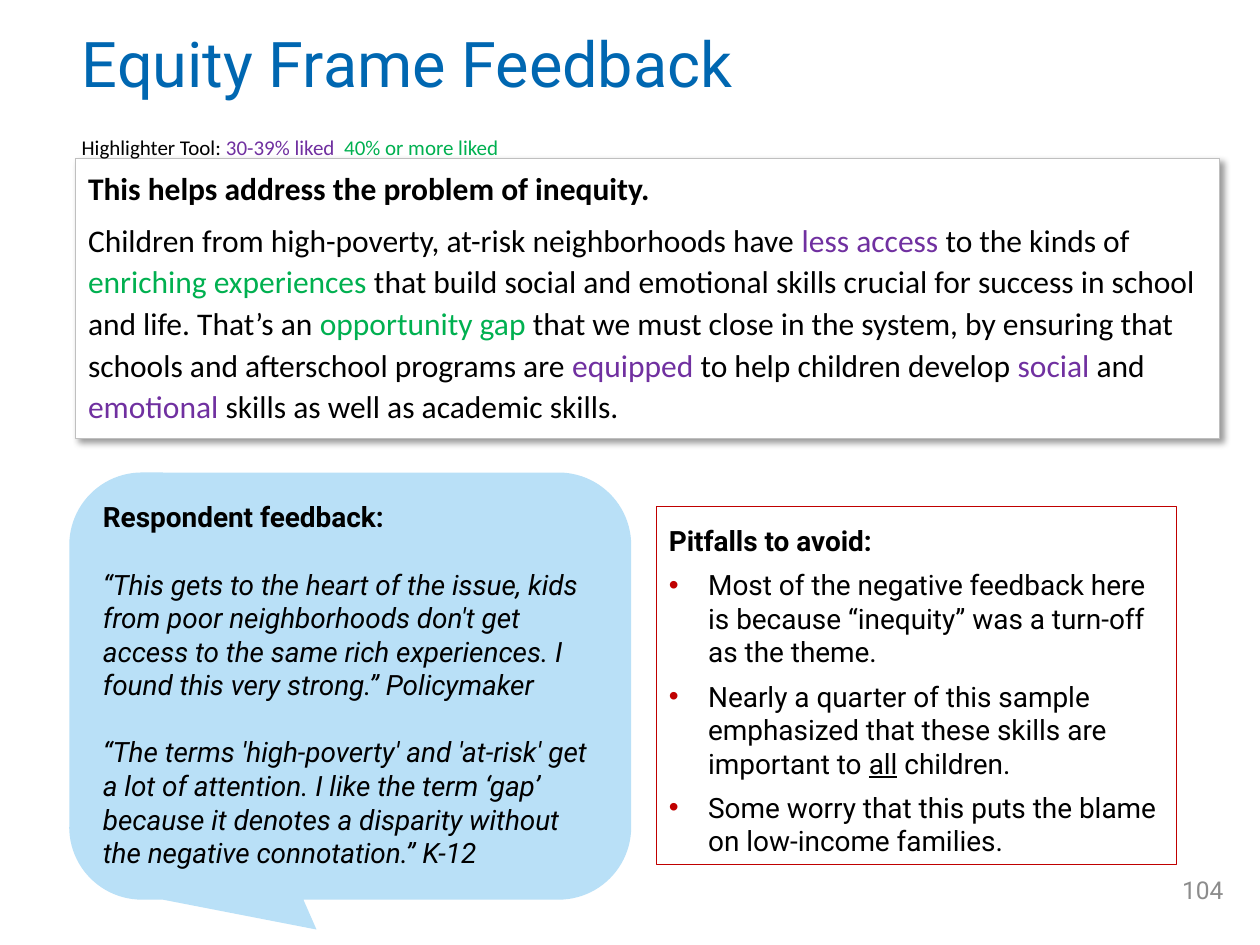
from lxml import etree
from pptx import Presentation
from pptx.dml.color import RGBColor
from pptx.enum.shapes import MSO_SHAPE
from pptx.enum.text import MSO_ANCHOR, MSO_AUTO_SIZE, PP_ALIGN
from pptx.oxml.ns import qn
from pptx.util import Pt

RECTANGLE = MSO_SHAPE.RECTANGLE
CALLOUT = MSO_SHAPE.ROUNDED_RECTANGULAR_CALLOUT
TOP, MIDDLE = MSO_ANCHOR.TOP, MSO_ANCHOR.MIDDLE
LEFT, RIGHT = PP_ALIGN.LEFT, PP_ALIGN.RIGHT
FIXED = MSO_AUTO_SIZE.NONE
TITLE_ONLY = 5

BLACK, WHITE, GRAY = "000000", "FFFFFF", "8C8C8C"
BLUE, SKY, BORDER = "0067B1", "B9E0F7", "BFBFBF"
PURPLE, GREEN, RED = "7030A0", "00B050", "C00000"


def color(value):
    return RGBColor.from_string(value)


class SlideBuilder:
    def __init__(self, deck):
        self.page = deck.slides.add_slide(deck.slide_layouts[TITLE_ONLY])

    def frame(self, box, anchor=TOP):
        frame = box.text_frame
        frame.word_wrap = True
        frame.auto_size = FIXED
        frame.vertical_anchor = anchor
        return frame

    def paragraph(self, frame, spans, size, font="Roboto", first=False, before=0,
                  spacing=1.0, align=LEFT, bullet=None):
        para = frame.paragraphs[0] if first else frame.add_paragraph()
        para.alignment = align
        para.line_spacing = spacing
        if not first:
            para.space_before = Pt(before)
        if bullet:
            self.bullet(para, bullet)
        for text, style in spans:
            span = para.add_run()
            span.text = text
            span.font.name = font
            span.font.size = Pt(size)
            span.font.color.rgb = color(style.get("color", BLACK))
            span.font.bold = style.get("bold", False)
            span.font.italic = style.get("italic", False)
            span.font.underline = style.get("underline", False)

    def bullet(self, para, value):
        properties = para._p.get_or_add_pPr()
        properties.set("marL", str(Pt(22.5)))
        properties.set("indent", str(-Pt(22.5)))
        tint = etree.SubElement(properties, qn("a:buClr"))
        etree.SubElement(tint, qn("a:srgbClr"), val=value)
        etree.SubElement(properties, qn("a:buFont"), typeface="Arial")
        etree.SubElement(properties, qn("a:buChar"), char="•")

    def title(self, bounds, text):
        box = self.page.shapes.title
        box.left, box.top, box.width, box.height = map(Pt, bounds)
        self.paragraph(self.frame(box, MIDDLE), [(text, {"color": BLUE})], 36,
                       first=True, spacing=0.9)

    def text(self, bounds, spans, size, font="Roboto", anchor=TOP, align=LEFT):
        box = self.page.shapes.add_textbox(*map(Pt, bounds))
        self.paragraph(self.frame(box, anchor), spans, size, font, first=True, align=align)

    def panel(self, kind, bounds, fill, line=None):
        box = self.page.shapes.add_shape(kind, *map(Pt, bounds))
        box.shadow.inherit = False
        box.fill.solid()
        box.fill.fore_color.rgb = color(fill)
        if line:
            box.line.color.rgb = color(line)
            box.line.width = Pt(0.75)
        else:
            box.line.fill.background()
        return box

    def drop_shadow(self, box):
        effects = box._element.spPr.find(qn("a:effectLst"))
        shadow = etree.SubElement(effects, qn("a:outerShdw"), blurRad=str(Pt(4)),
                                  dist=str(Pt(3)), dir="2700000", algn="tl", rotWithShape="0")
        tint = etree.SubElement(shadow, qn("a:srgbClr"), val=BLACK)
        etree.SubElement(tint, qn("a:alpha"), val="40000")


def main():
    deck = Presentation()
    deck.slide_width, deck.slide_height = Pt(720), Pt(540)
    slide = SlideBuilder(deck)
    plain, bold, italic = {}, {"bold": True}, {"italic": True}
    purple, green = {"color": PURPLE}, {"color": GREEN}

    slide.title((39.6, 0, 564.5, 76.3), "Equity Frame Feedback")
    slide.text((653, 493.9, 53.3, 28.8), [("104", {"color": GRAY})], 14,
               anchor=MIDDLE, align=RIGHT)

    message = slide.panel(RECTANGLE, (43.2, 90.7, 653.8, 159.8), WHITE, BORDER)
    slide.drop_shadow(message)
    frame = slide.frame(message)
    slide.paragraph(frame, [("This helps address the problem of inequity.", bold)],
                    18, "Calibri", first=True, spacing=1.1)
    slide.paragraph(frame, [
        ("Children from high-poverty, at-risk neighborhoods have ", plain),
        ("less access ", purple),
        ("to the kinds of ", plain),
        ("enriching experiences ", green),
        ("that build social and emotional skills crucial for success in school "
         "and life. That’s an ", plain),
        ("opportunity gap ", green),
        ("that we must close in the system, by ensuring that schools and "
         "afterschool programs are ", plain),
        ("equipped ", purple),
        ("to help children develop ", plain),
        ("social ", purple),
        ("and ", plain),
        ("emotional ", purple),
        ("skills as well as academic skills.", plain),
    ], 18, "Calibri", before=6, spacing=1.1)

    slide.text((39.6, 73.4, 296.6, 21.6), [
        ("Highlighter Tool: ", plain),
        ("30-39% liked  ", purple),
        ("40% or more liked", green),
    ], 12, "Calibri")

    feedback = slide.panel(CALLOUT, (39.6, 270, 321.1, 244.1), SKY)
    for index, value in enumerate((-0.06, 0.57, 0.17)):
        feedback.adjustments[index] = value
    frame = slide.frame(feedback)
    slide.paragraph(frame, [("Respondent feedback:", bold)], 16, first=True)
    for quote in (
        "“This gets to the heart of the issue, kids from poor neighborhoods don't get "
        "access to the same rich experiences. I found this very strong.” Policymaker",
        "“The terms 'high-poverty' and 'at-risk' get a lot of attention. I like the term "
        "‘gap’ because it denotes a disparity without the negative connotation.” K-12",
    ):
        slide.paragraph(frame, [(quote, italic)], 16, before=19.2)

    pitfalls = slide.panel(RECTANGLE, (375.1, 289.4, 297.4, 204.5), WHITE, RED)
    frame = slide.frame(pitfalls, MIDDLE)
    frame.margin_top = Pt(9.6)
    slide.paragraph(frame, [("Pitfalls to avoid:", bold)], 16, first=True)
    for spans in (
        [("Most of the negative feedback here is because “inequity” was a turn-off "
          "as the theme.", plain)],
        [("Nearly a quarter of this sample emphasized that these skills are important to ",
          plain), ("all", {"underline": True}), (" children.", plain)],
        [("Some worry that this puts the blame on low-income families.", plain)],
    ):
        slide.paragraph(frame, spans, 16, before=6, bullet=RED)

    deck.save("out.pptx")


if __name__ == "__main__":
    main()
